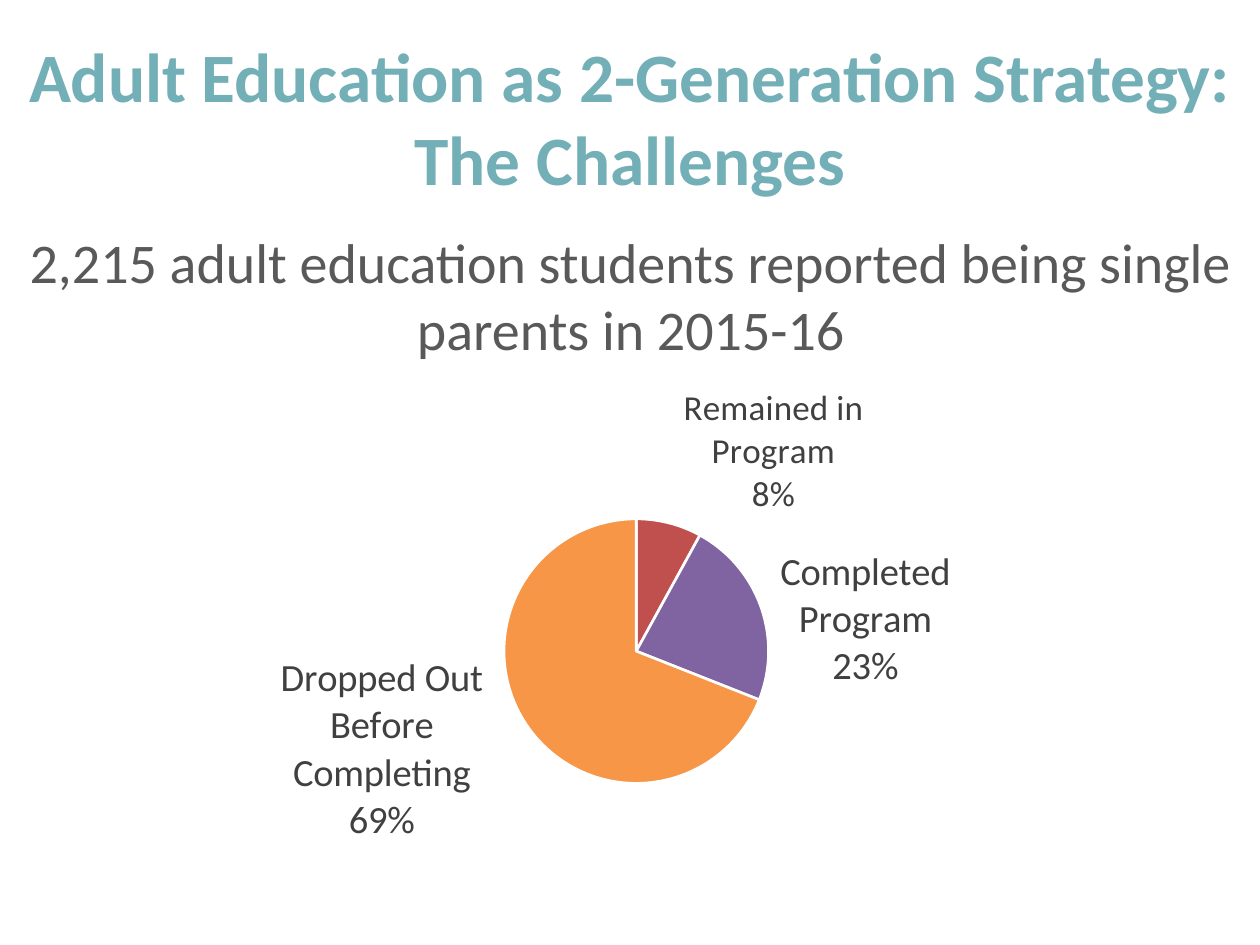
from lxml import etree
from pptx import Presentation
from pptx.chart.data import CategoryChartData
from pptx.dml.color import RGBColor
from pptx.enum.chart import XL_CHART_TYPE, XL_LABEL_POSITION
from pptx.enum.text import MSO_ANCHOR, PP_ALIGN
from pptx.oxml.ns import qn
from pptx.util import Pt

SCALE = 914400 // 126  # EMU per px
FONT = "Calibri"

# Category, value, slice colour, label size, label offset (fractions of the chart)
SLICES = [
    ("Remained in Program", 8, "C0504D", 20, (0.01, 0)),
    ("Completed Program", 23, "8064A2", 22, (0.01, 0.15)),
    ("Dropped Out Before Completing", 69, "F79646", 22, (-0.03, -0.13)),
]
PIE_AREA = {"x": 0.4, "y": 0.26, "w": 0.21, "h": 0.46}


def px(*lengths):
    return [length * SCALE for length in lengths]


def color(value):
    return RGBColor.from_string(value)


def style_font(font, size, value, bold=False):
    formats = {"name": FONT, "size": Pt(size), "bold": bold}
    for name, setting in formats.items():
        setattr(font, name, setting)
    font.color.rgb = color(value)


def add_text(page, place, text, size, value, bold=False, anchor=MSO_ANCHOR.TOP):
    frame = page.shapes.add_textbox(*px(*place)).text_frame
    frame.word_wrap = True
    frame.vertical_anchor = anchor
    para = frame.paragraphs[0]
    para.text = text
    para.alignment = PP_ALIGN.CENTER
    for span in para.runs:
        style_font(span.font, size, value, bold)


def fill_layout(layout, settings):
    """Write a manual chart layout from tag and value pairs."""
    for child in list(layout):
        layout.remove(child)
    manual = etree.SubElement(layout, qn("c:manualLayout"))
    for tag, setting in settings.items():
        etree.SubElement(manual, qn(f"c:{tag}")).set("val", str(setting))


def show_category_and_percent(element):
    shown = {"showVal": 0, "showCatName": 1, "showPercent": 1}
    for tag, setting in shown.items():
        element.find(qn(f"c:{tag}")).set("val", str(setting))
    separator = etree.Element(qn("c:separator"))
    separator.text = "\n"
    last = element.find(qn("c:showBubbleSize"))
    if last is None:
        last = element.find(qn("c:showPercent"))
    last.addnext(separator)


def style_slice(series, index, fill, size, offset):
    point = series.points[index]
    point.format.fill.solid()
    point.format.fill.fore_color.rgb = color(fill)
    point.format.line.color.rgb = color("FFFFFF")
    point.format.line.width = Pt(1.5)

    label = point.data_label
    style_font(label.font, size, "404040")
    label.position = XL_LABEL_POSITION.OUTSIDE_END
    element = label._dLbl
    show_category_and_percent(element)
    layout = etree.Element(qn("c:layout"))
    element.find(qn("c:idx")).addnext(layout)
    fill_layout(layout, dict(zip("xy", offset)))


def hide_leader_lines(series):
    labels = series.data_labels._element
    leader = labels.find(qn("c:showLeaderLines"))
    if leader is None:
        leader = etree.SubElement(labels, qn("c:showLeaderLines"))
    leader.set("val", "0")


def add_pie(page, place):
    data = CategoryChartData()
    data.categories = [entry[0] for entry in SLICES]
    data.add_series("Series 1", [entry[1] for entry in SLICES])
    chart = page.shapes.add_chart(XL_CHART_TYPE.PIE, *px(*place), data).chart
    chart.has_title = False
    chart.has_legend = False
    style_font(chart.font, 10, "000000")

    plot = chart.plots[0]
    plot.vary_by_categories = True
    series = plot.series[0]
    for index, (_, _, fill, size, offset) in enumerate(SLICES):
        style_slice(series, index, fill, size, offset)
    hide_leader_lines(series)

    # Fixed place of the pie inside the chart
    area = chart._chartSpace.chart.plotArea
    layout = area.find(qn("c:layout"))
    if layout is None:
        layout = etree.Element(qn("c:layout"))
        area.insert(0, layout)
    modes = {"layoutTarget": "inner", "xMode": "edge", "yMode": "edge"}
    fill_layout(layout, {**modes, **PIE_AREA})


def main():
    deck = Presentation()
    deck.slide_width, deck.slide_height = px(1260, 945)
    page = deck.slides.add_slide(deck.slide_layouts[6])

    # Heading and statement
    add_text(page, (0, 38, 1260, 157),
             "Adult Education as 2-Generation Strategy:\vThe Challenges",
             39.6, "73AFB6", bold=True, anchor=MSO_ANCHOR.MIDDLE)
    add_text(page, (1, 221, 1260, 149),
             "2,215 adult education students reported being single parents in 2015-16",
             32, "595959")

    # Outcomes of the students
    add_pie(page, (0, 369, 1260, 576))
    deck.save("out.pptx")


if __name__ == "__main__":
    main()
